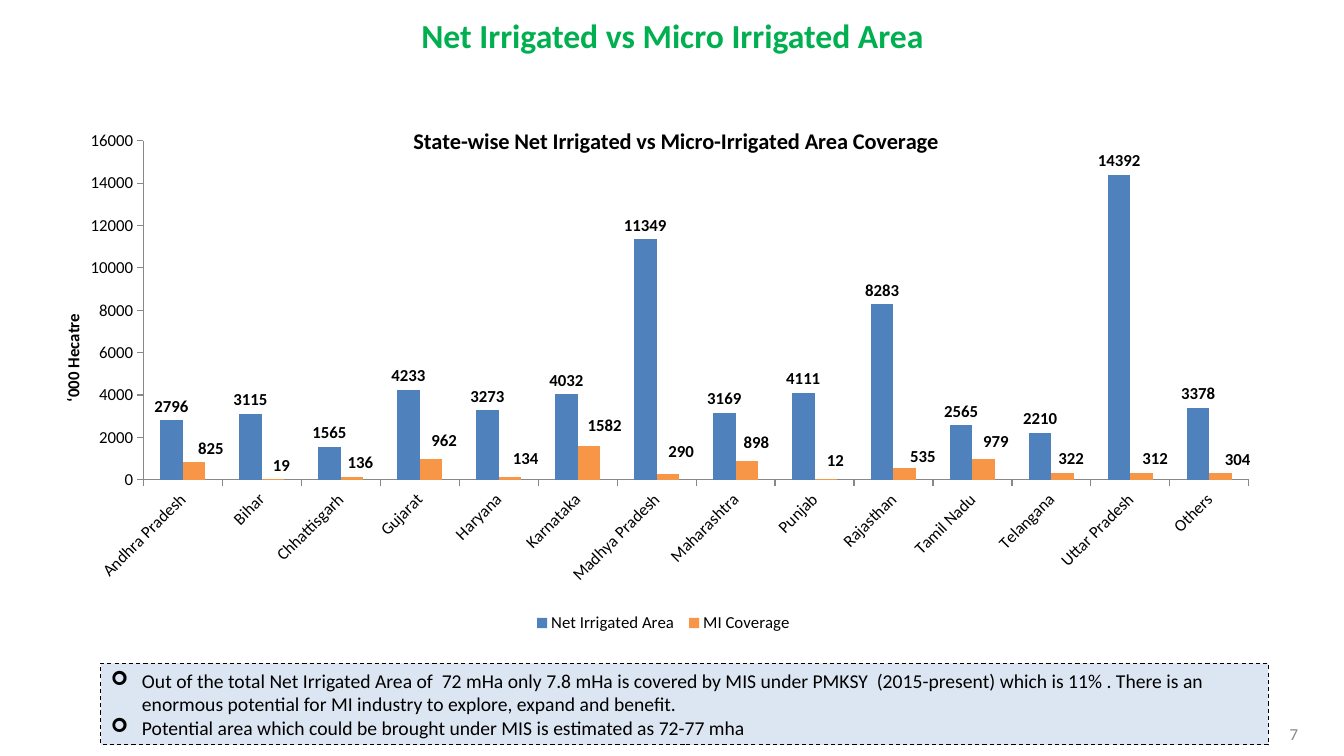
from dataclasses import dataclass

from lxml import etree
from pptx import Presentation
from pptx.chart.data import CategoryChartData
from pptx.dml.color import RGBColor
from pptx.enum.chart import XL_CHART_TYPE, XL_LABEL_POSITION, XL_LEGEND_POSITION, XL_TICK_MARK
from pptx.enum.dml import MSO_LINE
from pptx.enum.shapes import MSO_SHAPE
from pptx.enum.text import MSO_ANCHOR, PP_ALIGN
from pptx.oxml.ns import qn
from pptx.util import Inches, Pt

CLUSTERED = XL_CHART_TYPE.COLUMN_CLUSTERED
OUTSIDE_END = XL_LABEL_POSITION.OUTSIDE_END
BOTTOM = XL_LEGEND_POSITION.BOTTOM
TICK_OUT, TICK_NONE = XL_TICK_MARK.OUTSIDE, XL_TICK_MARK.NONE
DASH = MSO_LINE.DASH
RECTANGLE = MSO_SHAPE.RECTANGLE
LEFT, CENTER = PP_ALIGN.LEFT, PP_ALIGN.CENTER
MIDDLE = MSO_ANCHOR.MIDDLE

FONT = "Calibri"
BLACK = RGBColor(0x00, 0x00, 0x00)
GREEN = RGBColor(0x00, 0xAF, 0x50)
BLUE = RGBColor(0x4F, 0x81, 0xBD)
ORANGE = RGBColor(0xF7, 0x96, 0x46)
PALE_BLUE = RGBColor(0xDC, 0xE6, 0xF2)
GRAY = RGBColor(0x88, 0x88, 0x88)


@dataclass(frozen=True)
class State:
    name: str
    net_area: int
    micro_area: int
    label_shift: tuple[float, float]  # shares of the chart's width and height


STATES = [
    State("Andhra Pradesh", 2796, 825, (0.014, 0)),
    State("Bihar", 3115, 19, (0.007, 0)),
    State("Chhattisgarh", 1565, 136, (0.007, 0)),
    State("Gujarat", 4233, 962, (0.011, -0.008)),
    State("Haryana", 3273, 134, (0.013, -0.008)),
    State("Karnataka", 4032, 1582, (0.013, -0.013)),
    State("Madhya Pradesh", 11349, 290, (0.011, -0.015)),
    State("Maharashtra", 3169, 898, (0.008, -0.008)),
    State("Punjab", 4111, 12, (0.008, -0.01)),
    State("Rajasthan", 8283, 535, (0.015, 0.005)),
    State("Tamil Nadu", 2565, 979, (0.01, -0.006)),
    State("Telangana", 2210, 322, (0.007, 0)),
    State("Uttar Pradesh", 14392, 312, (0.011, 0)),
    State("Others", 3378, 304, (0.014, 0)),
]

FINDINGS = [
    "Out of the total Net Irrigated Area of  72 mHa only 7.8 mHa is covered by MIS under PMKSY  "
    "(2015-present) which is 11% . There is an enormous potential for MI industry to explore, "
    "expand and benefit.",
    "Potential area which could be brought under MIS is estimated as 72-77 mha",
]


def set_font(font, size: float, color: RGBColor = BLACK, bold: bool = False) -> None:
    font.name, font.size, font.bold = FONT, Pt(size), bold
    font.color.rgb = color


def write_text(frame, lines: list[str], *, size: float, color: RGBColor = BLACK,
               bold: bool = False, align=LEFT, margins: tuple[float, float] = (0, 0),
               indent: float = 0, bullet: str = "", line_spacing: float = 0) -> None:
    frame.word_wrap = True
    frame.vertical_anchor = MIDDLE
    frame.margin_left = frame.margin_right = Inches(margins[0])
    frame.margin_top = frame.margin_bottom = Inches(margins[1])
    for index, line in enumerate(lines):
        paragraph = frame.add_paragraph() if index else frame.paragraphs[0]
        properties = paragraph._p.get_or_add_pPr()
        properties.set("marL", str(Inches(indent)))
        if bullet:
            properties.set("indent", str(-Inches(indent)))
            etree.SubElement(properties, qn("a:buFont"), typeface="Wingdings")
            etree.SubElement(properties, qn("a:buChar"), char=bullet)
        paragraph.alignment = align
        if line_spacing:
            paragraph.line_spacing = Pt(line_spacing)
        run = paragraph.add_run()
        run.text = line
        set_font(run.font, size, color, bold)


def make_layout(**values: str | float):
    layout = etree.Element(qn("c:layout"))
    manual = etree.SubElement(layout, qn("c:manualLayout"))
    for name, value in values.items():
        etree.SubElement(manual, qn(f"c:{name}"), val=str(value))
    return layout


def place_title(title_element, layout) -> None:
    for old in title_element.findall(qn("c:layout")):
        title_element.remove(old)
    title_element.find(qn("c:tx")).addnext(layout)


def write_chart_title(frame, text: str, size: float) -> None:
    run = frame.paragraphs[0].add_run()
    run.text = text
    set_font(run.font, size, bold=True)


def style_axis(axis) -> None:
    axis.has_major_gridlines = False
    axis.major_tick_mark, axis.minor_tick_mark = TICK_OUT, TICK_NONE
    axis.format.line.color.rgb = GRAY
    set_font(axis.tick_labels.font, 12)


def add_irrigation_chart(slide) -> None:
    data = CategoryChartData(number_format="0")
    data.categories = [state.name for state in STATES]
    data.add_series("Net Irrigated Area ", [state.net_area for state in STATES])
    data.add_series("MI Coverage", [state.micro_area for state in STATES])
    chart = slide.shapes.add_chart(CLUSTERED, Inches(0.58), Inches(1.05),
                                   Inches(12), Inches(5.27), data).chart
    set_font(chart.font, 12)

    # Title, plot area and legend
    write_chart_title(chart.chart_title.text_frame,
                      "State-wise Net Irrigated vs Micro-Irrigated Area Coverage", 16)
    chart.chart_title.include_in_layout = False
    place_title(chart.chart_title._element,
                make_layout(xMode="edge", yMode="edge", x=0.29, y=0.03))
    plot_area = chart._chartSpace.chart.plotArea
    for old in plot_area.findall(qn("c:layout")):
        plot_area.remove(old)
    plot_area.insert(0, make_layout(layoutTarget="inner", xMode="edge", yMode="edge",
                                    x=0.07, y=0.066, w=0.914, h=0.638))
    chart.has_legend = True
    chart.legend.position = BOTTOM
    chart.legend.include_in_layout = False
    set_font(chart.legend.font, 12)

    # Axes
    style_axis(chart.category_axis)
    style_axis(chart.value_axis)
    body = chart.category_axis._element.find(qn("c:txPr")).find(qn("a:bodyPr"))
    body.set("rot", str(-45 * 60000))
    body.set("vert", "horz")
    chart.value_axis.minimum_scale, chart.value_axis.maximum_scale = 0, 16000
    chart.value_axis.major_unit = 2000
    write_chart_title(chart.value_axis.axis_title.text_frame, "‘000 Hecatre", 12)

    # Columns and their labels
    plot = chart.plots[0]
    plot.gap_width, plot.overlap, plot.vary_by_categories = 150, 0, False
    for series, color in zip(plot.series, (BLUE, ORANGE)):
        series.format.fill.solid()
        series.format.fill.fore_color.rgb = color
        labels = series.data_labels
        labels.show_value, labels.position = True, OUTSIDE_END
        labels.number_format, labels.number_format_is_linked = "0", False
        set_font(labels.font, 12, bold=True)
    micro_series = plot.series[1]
    for index in range(len(STATES)):
        label = micro_series.points[index].data_label
        set_font(label.font, 12, bold=True)
        label.position = OUTSIDE_END
    for state, label in zip(STATES, micro_series._element.iter(qn("c:dLbl"))):
        x, y = state.label_shift
        label.find(qn("c:idx")).addnext(make_layout(x=x, y=y))


def add_findings(slide) -> None:
    box = slide.shapes.add_shape(RECTANGLE, Inches(1), Inches(6.58), Inches(11.58), Inches(0.81))
    box.shadow.inherit = False
    box.fill.solid()
    box.fill.fore_color.rgb = PALE_BLUE
    box.line.color.rgb = BLACK
    box.line.width, box.line.dash_style = Pt(0.75), DASH
    write_text(box.text_frame, FINDINGS, size=14, margins=(0.1, 0.05), indent=0.31, bullet="➢")


def main() -> None:
    presentation = Presentation()
    presentation.slide_width, presentation.slide_height = Inches(13.33), Inches(7.5)
    slide = presentation.slides.add_slide(presentation.slide_layouts[6])

    # Heading
    heading = slide.shapes.add_textbox(Inches(0.67), Inches(0.13), Inches(12), Inches(0.43))
    write_text(heading.text_frame, ["Net Irrigated vs Micro Irrigated Area"],
               size=24, color=GREEN, bold=True, align=CENTER)

    add_irrigation_chart(slide)
    add_findings(slide)

    # Page number
    number = slide.shapes.add_textbox(Inches(12.75), Inches(7.19), Inches(0.25), Inches(0.2))
    write_text(number.text_frame, ["7"], size=12, color=GRAY, indent=0.04, line_spacing=12.4)

    presentation.save("out.pptx")


if __name__ == "__main__":
    main()
